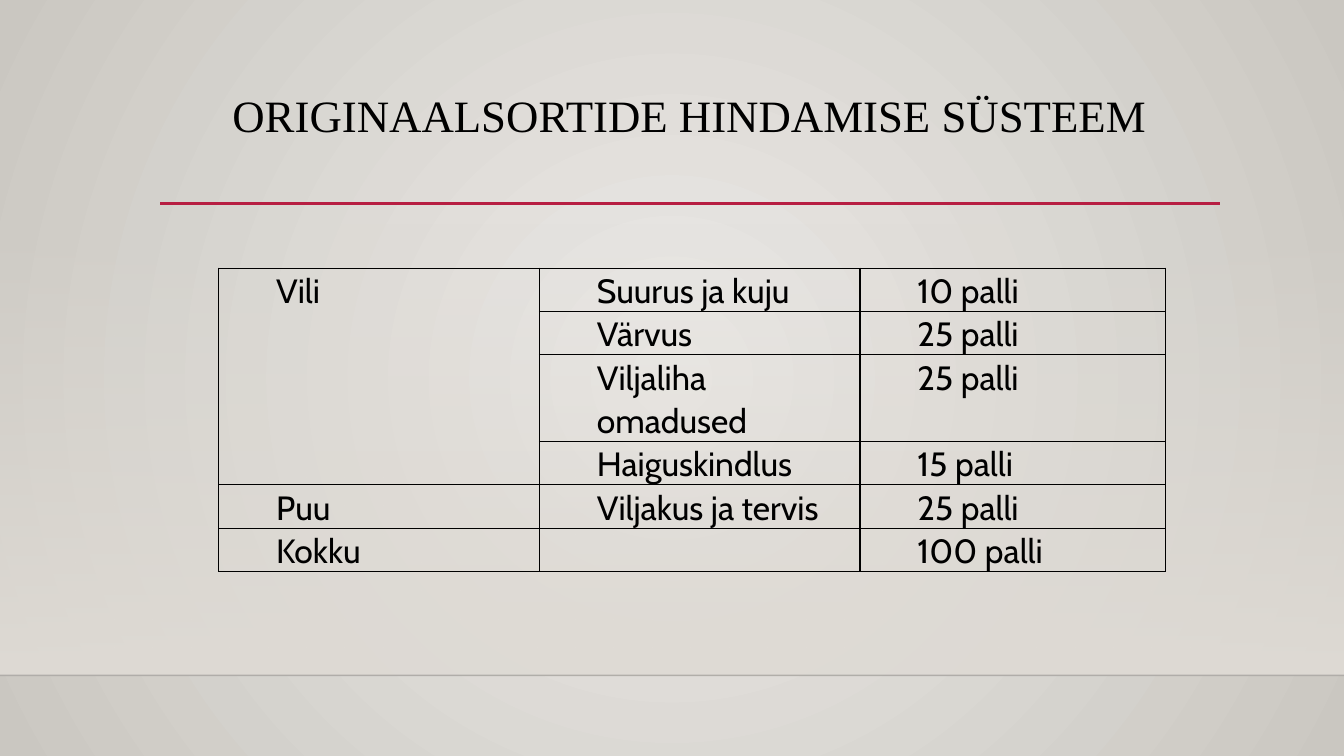
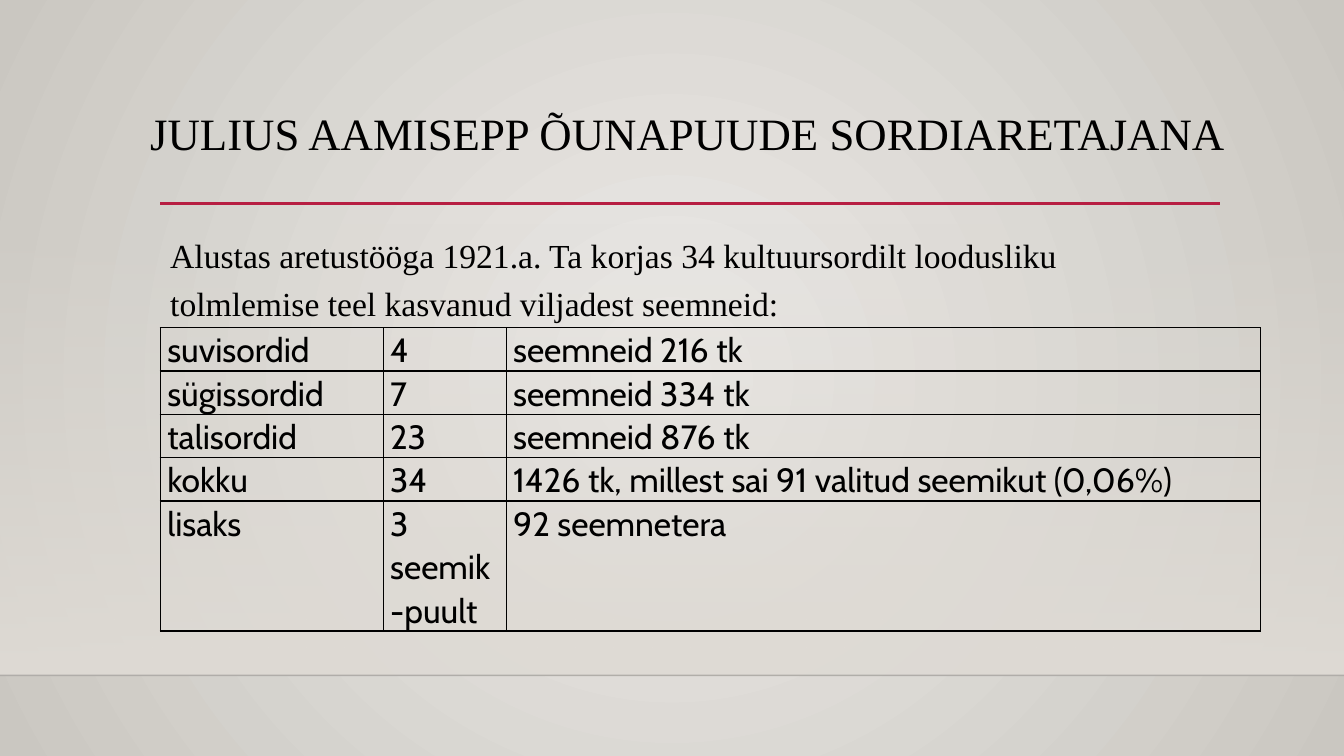
from lxml import etree
from pptx import Presentation
from pptx.dml.color import RGBColor
from pptx.enum.shapes import MSO_CONNECTOR, MSO_SHAPE
from pptx.enum.text import MSO_ANCHOR, PP_ALIGN
from pptx.oxml.ns import qn
from pptx.util import Inches, Pt

LEFT, CENTER, JUSTIFY = PP_ALIGN.LEFT, PP_ALIGN.CENTER, PP_ALIGN.JUSTIFY
TOP = MSO_ANCHOR.TOP
RECTANGLE, STRAIGHT = MSO_SHAPE.RECTANGLE, MSO_CONNECTOR.STRAIGHT

# Shared style
SLIDE_W, SLIDE_H = 13.33, 7.5
BLACK, ACCENT, FLOOR_LINE = "000000", "B71E42", "000001"
GLOW, EDGE, WALL = "ECEAE7", "CAC7C1", "DFDBD5"
SERIF, SANS = "Times New Roman", "Cabin"
TITLE_SIZE, TEXT_SIZE = 32, 24
MARGIN_LEFT, CONTENT_W = 1.59, 10.5
RULE_RIGHT, RULE_Y = 12.1, 2.02
WALL_TOP, FLOOR_Y = 2.21, 6.7
ROW_H = 0.43

# Content
SCORING = {
    "title": "ORIGINAALSORTIDE HINDAMISE SÜSTEEM",
    "title_box": (1.59, 0.88, 10.5, 1.15),
    "title_align": CENTER,
    "table_at": (2.17, 2.66),
    "columns": (3.18, 3.18, 3.03),
    "indent": 0.5,
    "rows": [
        ("Vili", "Suurus ja kuju", "10 palli"),
        ("", "Värvus", "25 palli"),
        ("", "Viljaliha omadused", "25 palli"),
        ("", "Haiguskindlus", "15 palli"),
        ("Puu", "Viljakus ja tervis", "25 palli"),
        ("Kokku", "", "100 palli"),
    ],
    "row_lines": {2: 2},
    "merge": ((0, 0), (3, 0)),
}
BREEDING = {
    "title": "JULIUS AAMISEPP ÕUNAPUUDE SORDIARETAJANA",
    "title_box": (1.39, 1.06, 10.91, 1.15),
    "title_align": LEFT,
    "intro": "Alustas aretustööga 1921.a. Ta korjas 34 kultuursordilt "
             "loodusliku tolmlemise teel kasvanud viljadest seemneid:",
    "table_at": (1.59, 3.25),
    "columns": (2.21, 1.22, 7.48),
    "indent": 0,
    "rows": [
        ("suvisordid", "4", "seemneid 216 tk"),
        ("sügissordid", "7", "seemneid 334 tk"),
        ("talisordid", "23", "seemneid 876 tk"),
        ("kokku", "34", "1426 tk, millest sai 91 valitud seemikut (0,06%)"),
        ("lisaks", "3 seemik-puult", "92 seemnetera"),
    ],
    "row_lines": {4: 3},
}
INTRO_BOX = (MARGIN_LEFT, 2.2, CONTENT_W, 3.77)


def rgb(hex_colour):
    return RGBColor.from_string(hex_colour)


def child(parent, tag, **attributes):
    return etree.SubElement(parent, qn(tag), attributes)


def set_opacity(colour, percent):
    child(colour, "a:alpha", val=str(percent * 1000))


def set_gradient(fill, colours):
    fill.gradient()
    for stop, colour in zip(fill.gradient_stops, colours):
        stop.color.rgb = rgb(colour)


def set_background(master):
    """Radial glow, light in the middle of the slide."""
    set_gradient(master.background.fill, (GLOW, EDGE))
    gradient = master.element.find(".//" + qn("a:gradFill"))
    gradient.remove(gradient.find(qn("a:lin")))
    circle = child(gradient, "a:path", path="circle")
    child(circle, "a:fillToRect", l="50000", t="50000", r="50000", b="50000")


def add_line(slide, x1, x2, y, colour, width):
    line = slide.shapes.add_connector(
        STRAIGHT, Inches(x1), Inches(y), Inches(x2), Inches(y))
    line.line.color.rgb = rgb(colour)
    line.line.width = Pt(width)
    child(line.element.spPr, "a:effectLst")
    return line


def add_backdrop(slide):
    # Wall that fades in towards the floor
    wall = slide.shapes.add_shape(
        RECTANGLE, 0, Inches(WALL_TOP), Inches(SLIDE_W),
        Inches(FLOOR_Y - WALL_TOP))
    wall.shadow.inherit = False
    wall.line.fill.background()
    set_gradient(wall.fill, (WALL, WALL))
    wall.fill.gradient_angle = 270
    set_opacity(wall.element.find(".//" + qn("a:srgbClr")), 0)
    # Floor edge and title rule
    floor = add_line(slide, 0, SLIDE_W, FLOOR_Y, FLOOR_LINE, 1)
    set_opacity(floor.element.find(".//" + qn("a:srgbClr")), 20)
    add_line(slide, MARGIN_LEFT, RULE_RIGHT, RULE_Y, ACCENT, 2.5)


def write(frame, text, font, size, align, spacing):
    paragraph = frame.paragraphs[0]
    paragraph.alignment = align
    paragraph.line_spacing = spacing
    run = paragraph.add_run()
    run.text = text
    run.font.name = font
    run.font.size = Pt(size)
    run.font.color.rgb = rgb(BLACK)
    return paragraph


def add_text(slide, box, text, size, align, spacing):
    frame = slide.shapes.add_textbox(*map(Inches, box)).text_frame
    frame.word_wrap = True
    frame.vertical_anchor = TOP
    write(frame, text, SERIF, size, align, spacing)


def style_cell(cell):
    cell.margin_left = cell.margin_right = Inches(0.07)
    cell.margin_top = cell.margin_bottom = 0
    cell.fill.background()
    properties = cell._tc.get_or_add_tcPr()
    for position, side in enumerate(("a:lnL", "a:lnR", "a:lnT", "a:lnB")):
        border = child(properties, side, w=str(Pt(1)))
        child(child(border, "a:solidFill"), "a:srgbClr", val=BLACK)
        properties.insert(position, border)


def add_grid(slide, content):
    rows, columns = content["rows"], content["columns"]
    heights = [ROW_H * content["row_lines"].get(r, 1) for r in range(len(rows))]
    left, top = content["table_at"]
    grid = slide.shapes.add_table(
        len(rows), len(columns), Inches(left), Inches(top),
        Inches(sum(columns)), Inches(sum(heights))).table
    grid.first_row = grid.horz_banding = False
    for column, width in zip(grid.columns, columns):
        column.width = Inches(width)
    for r, (texts, height) in enumerate(zip(rows, heights)):
        grid.rows[r].height = Inches(height)
        for c, text in enumerate(texts):
            cell = grid.cell(r, c)
            style_cell(cell)
            if text:
                paragraph = write(cell.text_frame, text, SANS, TEXT_SIZE,
                                  JUSTIFY, 1.07)
                indent = paragraph._p.get_or_add_pPr()
                indent.set("marL", str(Inches(content["indent"])))
                indent.set("indent", "0")
    if "merge" in content:
        first, last = content["merge"]
        grid.cell(*first).merge(grid.cell(*last))


def main():
    prs = Presentation()
    prs.slide_width, prs.slide_height = Inches(SLIDE_W), Inches(SLIDE_H)
    set_background(prs.slide_master)
    for content in (SCORING, BREEDING):
        slide = prs.slides.add_slide(prs.slide_layouts[6])
        add_backdrop(slide)
        add_text(slide, content["title_box"], content["title"], TITLE_SIZE,
                 content["title_align"], 0.9)
        if "intro" in content:
            add_text(slide, INTRO_BOX, content["intro"], TEXT_SIZE, LEFT, 1.2)
        add_grid(slide, content)
    prs.save("out.pptx")


if __name__ == "__main__":
    main()
